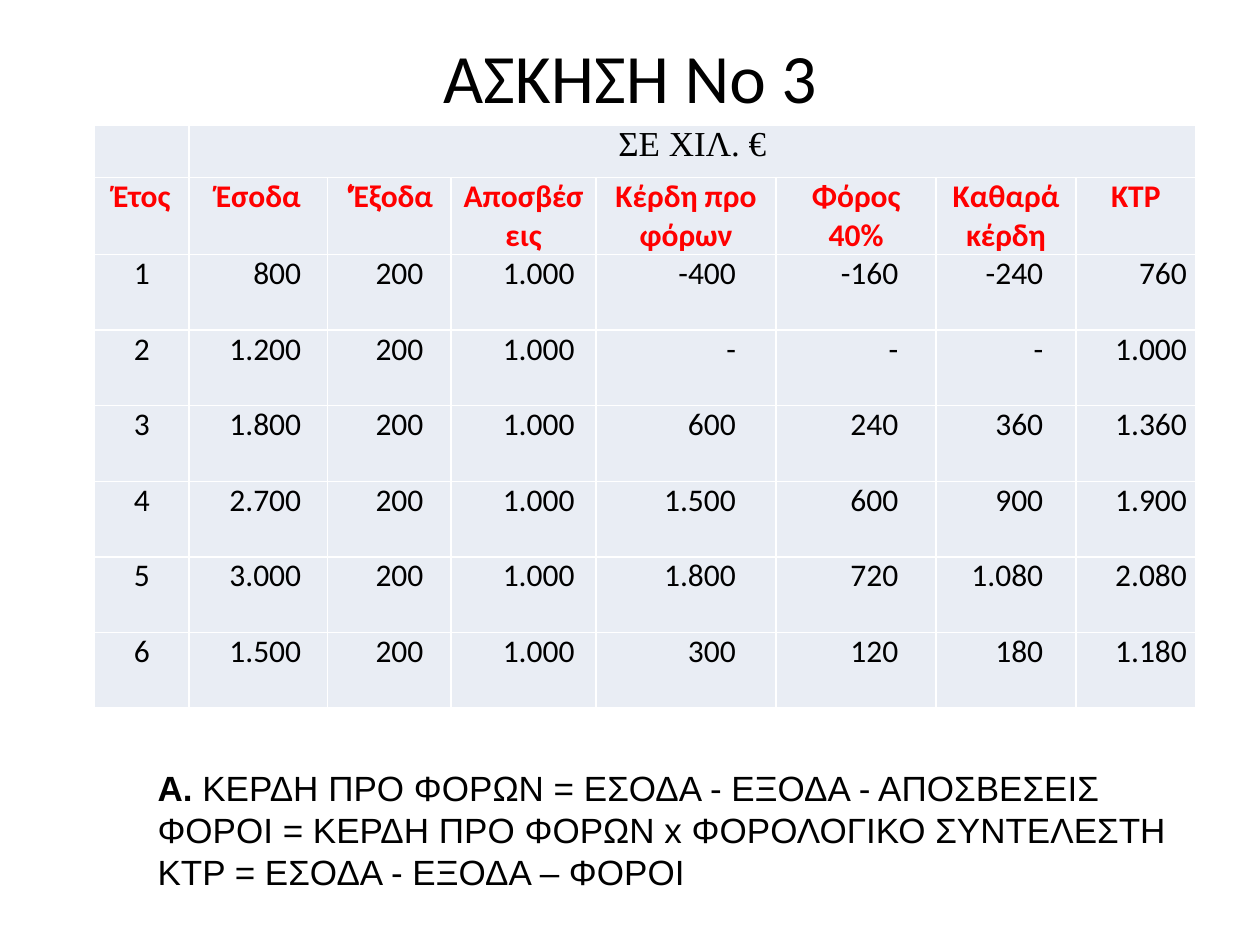
from dataclasses import dataclass

from lxml.etree import SubElement
from pptx import Presentation
from pptx.dml.color import RGBColor
from pptx.enum.text import MSO_ANCHOR, PP_ALIGN
from pptx.oxml.ns import qn
from pptx.util import Inches, Pt


@dataclass(frozen=True)
class Theme:
    text: str = "000000"
    heading: str = "FF0000"
    cell: str = "E9EDF4"
    border: str = "FFFFFF"
    title_size: float = 39.6
    large_size: float = 20
    table_size: float = 18
    border_width: float = 1


THEME = Theme()
CELL_INSET = 0.07
FIRST_INDENT = 0.24

HEADINGS = ["Έτος", "Έσοδα", "‘Έξοδα", "Αποσβέσεις", "Κέρδη προ φόρων",
            "Φόρος 40%", "Καθαρά κέρδη", "ΚΤΡ"]
YEARS = [
    ["1", "800", "200", "1.000", "-400", "-160", "-240", "760"],
    ["2", "1.200", "200", "1.000", "-", "-", "-", "1.000"],
    ["3", "1.800", "200", "1.000", "600", "240", "360", "1.360"],
    ["4", "2.700", "200", "1.000", "1.500", "600", "900", "1.900"],
    ["5", "3.000", "200", "1.000", "1.800", "720", "1.080", "2.080"],
    ["6", "1.500", "200", "1.000", "300", "120", "180", "1.180"],
]
COLUMN_WIDTHS = [0.75, 1.1, 0.98, 1.15, 1.43, 1.27, 1.11, 0.95]
ROW_HEIGHTS = [0.42, 0.61] + [0.6] * len(YEARS)
# Alignment, left inset and right inset of the figures in each column
CENTER, RIGHT = PP_ALIGN.CENTER, PP_ALIGN.RIGHT
FIGURE_LAYOUT = [
    (CENTER, CELL_INSET, CELL_INSET),
    (RIGHT, CELL_INSET, 0.21),
    (RIGHT, CELL_INSET, 0.22),
    (CENTER, CELL_INSET + FIRST_INDENT, CELL_INSET),
    (RIGHT, CELL_INSET, 0.32),
    (RIGHT, CELL_INSET, 0.3),
    (RIGHT, CELL_INSET, 0.26),
    (RIGHT, CELL_INSET, CELL_INSET),
]
FORMULAS = [
    [("Α. ", True), ("ΚΕΡΔΗ ΠΡΟ ΦΟΡΩΝ = ΕΣΟΔΑ - ΕΞΟΔΑ - ΑΠΟΣΒΕΣΕΙΣ", False)],
    [("ΦΟΡΟΙ = ΚΕΡΔΗ ΠΡΟ ΦΟΡΩΝ x ΦΟΡΟΛΟΓΙΚΟ ΣΥΝΤΕΛΕΣΤΗ", False)],
    [("ΚΤΡ = ΕΣΟΔΑ - ΕΞΟΔΑ – ΦΟΡΟΙ", False)],
]


def style_paragraph(paragraph, font_name, size, color=THEME.text,
                    alignment=CENTER, bold=None):
    paragraph.alignment = alignment
    font = paragraph.font
    font.name, font.size, font.bold = font_name, Pt(size), bold
    font.color.rgb = RGBColor.from_string(color)


def add_text_frame(slide, left, top, width, height):
    shape = slide.shapes.add_textbox(
        Inches(left), Inches(top), Inches(width), Inches(height))
    frame = shape.text_frame
    frame.word_wrap = True
    frame.vertical_anchor = MSO_ANCHOR.MIDDLE
    return frame


def style_cell(cell):
    # Borders come before the fill in the cell properties
    properties = cell._tc.get_or_add_tcPr()
    for side in ("a:lnL", "a:lnR", "a:lnT", "a:lnB"):
        line = SubElement(properties, qn(side), w=str(Pt(THEME.border_width)))
        fill = SubElement(line, qn("a:solidFill"))
        SubElement(fill, qn("a:srgbClr"), val=THEME.border)
    cell.fill.solid()
    cell.fill.fore_color.rgb = RGBColor.from_string(THEME.cell)


def write_cell(cell, text, left=CELL_INSET, right=CELL_INSET,
               font_name="Calibri", size=THEME.table_size, **style):
    cell.margin_left, cell.margin_right = Inches(left), Inches(right)
    cell.margin_top = cell.margin_bottom = 0
    cell.text = text
    style_paragraph(cell.text_frame.paragraphs[0], font_name, size, **style)


def add_title(slide):
    paragraph = add_text_frame(slide, 0.75, 0.29, 8.5, 0.63).paragraphs[0]
    paragraph.text = "ΑΣΚΗΣΗ Νο 3"
    style_paragraph(paragraph, "Calibri", THEME.title_size)


def add_cash_flow_table(slide):
    table = slide.shapes.add_table(
        len(ROW_HEIGHTS), len(COLUMN_WIDTHS), Inches(0.75), Inches(0.99),
        Inches(sum(COLUMN_WIDTHS)), Inches(sum(ROW_HEIGHTS))).table
    for column, width in zip(table.columns, COLUMN_WIDTHS):
        column.width = Inches(width)
    for row, height in zip(table.rows, ROW_HEIGHTS):
        row.height = Inches(height)
    for cell in table.iter_cells():
        style_cell(cell)

    # Unit banner over all columns but the year
    table.cell(0, 1).merge(table.cell(0, len(COLUMN_WIDTHS) - 1))
    write_cell(table.cell(0, 1), "ΣΕ ΧΙΛ. €",
               font_name="Times New Roman", size=THEME.large_size)

    # Column headings
    for column, heading in enumerate(HEADINGS):
        write_cell(table.cell(1, column), heading,
                   color=THEME.heading, bold=True)

    # Yearly figures
    for row, figures in enumerate(YEARS, start=2):
        for column, figure in enumerate(figures):
            alignment, left, right = FIGURE_LAYOUT[column]
            write_cell(table.cell(row, column), figure, left, right,
                       alignment=alignment, bold=False)


def add_formulas(slide):
    frame = add_text_frame(slide, 0.91, 6.03, 8.82, 1.11)
    frame.margin_left = Inches(0.1 + FIRST_INDENT)
    for index, parts in enumerate(FORMULAS):
        paragraph = frame.add_paragraph() if index else frame.paragraphs[0]
        style_paragraph(paragraph, "Arial", THEME.large_size,
                        alignment=PP_ALIGN.JUSTIFY)
        for text, bold in parts:
            run = paragraph.add_run()
            run.text = text
            run.font.bold = bold


def main():
    presentation = Presentation()
    presentation.slide_width = Inches(10)
    presentation.slide_height = Inches(7.5)
    slide = presentation.slides.add_slide(presentation.slide_layouts[6])
    add_title(slide)
    add_cash_flow_table(slide)
    add_formulas(slide)
    presentation.save("out.pptx")


if __name__ == "__main__":
    main()
